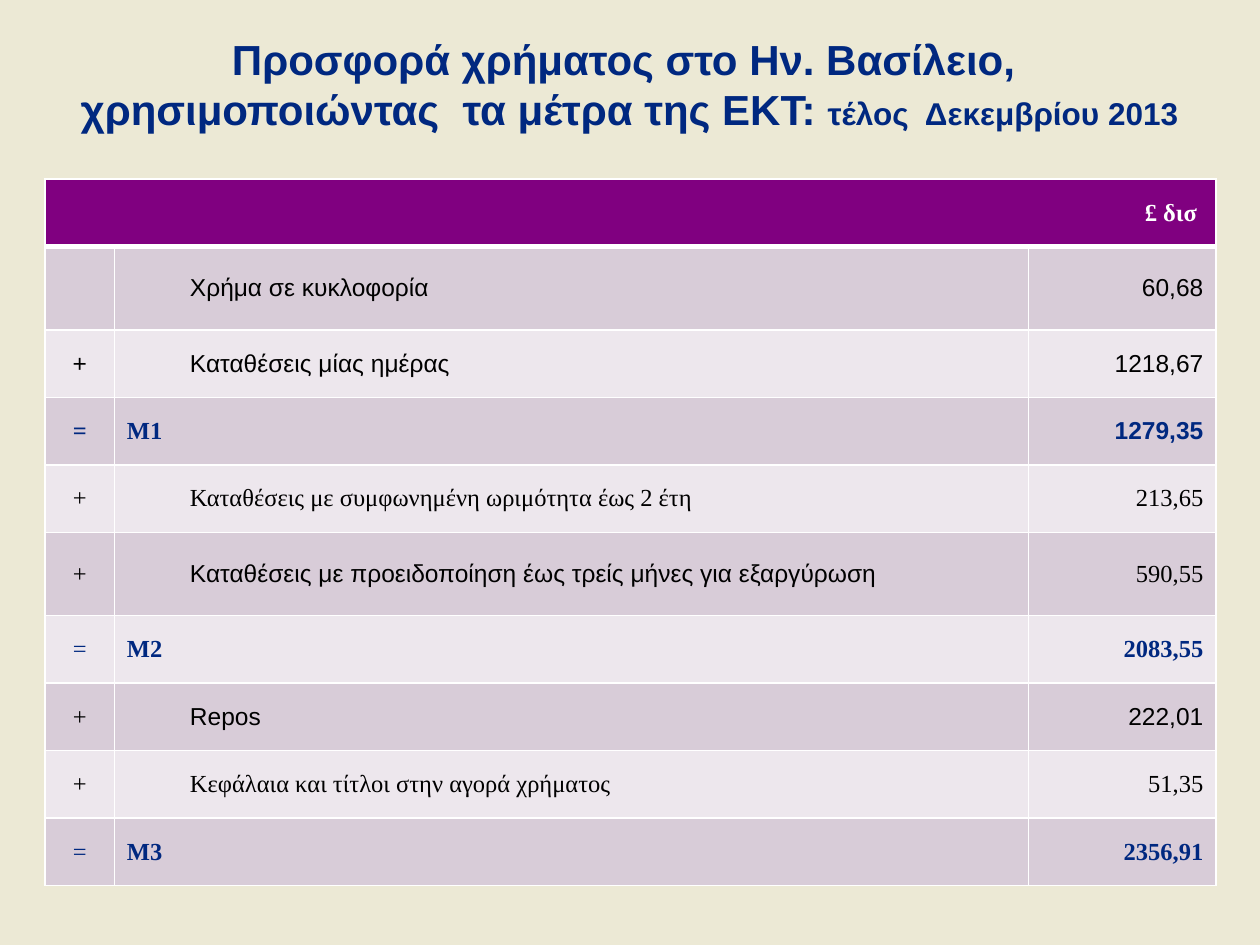
from pptx import Presentation
from pptx.dml.color import RGBColor
from pptx.enum.text import MSO_ANCHOR as Anchor, PP_ALIGN as Align
from pptx.oxml import parse_xml
from pptx.oxml.ns import nsdecls, qn
from pptx.util import Cm, Pt

NAVY, BLACK, WHITE = "002880", "000000", "FFFFFF"
PURPLE, DARK, LIGHT = "800080", "D8CCD8", "EDE7ED"
FONTS = {"A": "Arial", "T": "Times New Roman"}
WIDTHS = [1.4, 18.42, 3.78]
ROW, TALL = 1.36, 1.68
PAD, WIDE = 0.25, 0.38

# Sign, label, amount, and the font of each
ROWS = [
    ("", "Χρήμα σε κυκλοφορία", "60,68", "AAA"),
    ("+", "Καταθέσεις μίας ημέρας", "1218,67", "AAA"),
    ("=", "Μ1", "1279,35", "TTA"),
    ("+", "Καταθέσεις με συμφωνημένη ωριμότητα έως 2 έτη", "213,65", "TTT"),
    ("+", "Καταθέσεις με προειδοποίηση έως τρείς μήνες για εξαργύρωση",
     "590,55", "TAT"),
    ("=", "Μ2", "2083,55", "TTT"),
    ("+", "Repos", "222,01", "TAA"),
    ("+", "Κεφάλαια και τίτλοι στην αγορά χρήματος", "51,35", "TTT"),
    ("=", "M3", "2356,91", "TTT"),
]
TALL_ROWS = (1, 5)


def color(text):
    """Turn a hex string into a colour."""
    return RGBColor.from_string(text)


def style(font, name, size, tint, bold=False):
    """Set the look of a font."""
    font.name, font.size, font.bold = name, Pt(size), bold
    font.color.rgb = color(tint)


def shade(run):
    """Give a run of text a dark shadow."""
    run._r.get_or_add_rPr().append(parse_xml(
        f'<a:effectLst {nsdecls("a")}><a:outerShdw dist="25400" dir="2700000">'
        f'<a:srgbClr val="{BLACK}"/></a:outerShdw></a:effectLst>'))


def add_title(slide):
    """Fill the title in two sizes."""
    title = slide.shapes.title
    title.left, title.top = Cm(0.08), Cm(0.53)
    title.width, title.height = Cm(25.22), Cm(2.31)
    para = title.text_frame.paragraphs[0]
    para.alignment = Align.CENTER
    style(para.font, FONTS["A"], 24, NAVY, True)
    main = ("Προσφορά χρήματος στο Ην. Βασίλειο, ",
            "χρησιμοποιώντας  τα μέτρα της ΕΚΤ: ")
    for text, size in ((main[0], 24), (main[1], 24),
                       ("τέλος  Δεκεμβρίου 2013", 18)):
        if text == main[1]:
            para.add_line_break()
        run = para.add_run()
        run.text, run.font.size = text, Pt(size)
        shade(run)


def edge(cell, base=1):
    """Draw white borders round a cell."""
    props = cell._tc.get_or_add_tcPr()
    for spot, side in enumerate("LRTB"):
        wide = Pt(base if side == "B" else 1)
        props.insert(spot, parse_xml(
            f'<a:ln{side} {nsdecls("a")} w="{wide}"><a:solidFill>'
            f'<a:srgbClr val="{WHITE}"/></a:solidFill></a:ln{side}>'))


def paint(cell, fill, base=1):
    """Set the fill, borders and anchor of a cell."""
    cell.fill.solid()
    cell.fill.fore_color.rgb = color(fill)
    cell.vertical_anchor = Anchor.MIDDLE
    edge(cell, base)


def write(cell, text, align, font, tint, bold=False, pad=PAD):
    """Put one line of text in a cell."""
    cell.margin_left = cell.margin_right = Cm(pad)
    if pad == WIDE:
        cell.margin_top = cell.margin_bottom = Cm(pad)
    para = cell.text_frame.paragraphs[0]
    para.text, para.alignment = text, align
    style(para.font, FONTS[font], 14, tint, bold)
    return para


def add_head(table):
    """Merge and fill the header row."""
    for cell in table.rows[0].cells:
        paint(cell, PURPLE, 3)
    head = table.cell(0, 0)
    head.merge(table.cell(0, 2))
    write(head, "£ δισ", Align.RIGHT, "T", WHITE, True, WIDE)


def add_row(table, num, sign, label, amount, fonts):
    """Fill one row of the table."""
    total = sign == "="
    tint = NAVY if total else BLACK
    cells = table.rows[num].cells
    for cell in cells:
        paint(cell, DARK if num % 2 else LIGHT)
    if sign:
        write(cells[0], sign, Align.CENTER, fonts[0], tint,
              label == "Μ1", WIDE)
    para = write(cells[1], label, Align.LEFT, fonts[1], tint, total)
    if not total:
        para.level = 1
        para._p.get_or_add_pPr().set("marL", str(Cm(1.27)))
    write(cells[2], amount, Align.RIGHT, fonts[2], tint, total)


def add_grid(slide):
    """Add the table of money measures."""
    size = len(ROWS) + 1
    table = slide.shapes.add_table(size, 3, Cm(0.91), Cm(3.61),
                                   Cm(sum(WIDTHS)), Cm(ROW * size)).table
    for col, wide in zip(table.columns, WIDTHS):
        col.width = Cm(wide)
    for num, row in enumerate(table.rows):
        row.height = Cm(TALL if num in TALL_ROWS else ROW)
    add_head(table)
    for num, row in enumerate(ROWS, 1):
        add_row(table, num, *row)


def main():
    """Build the slide and save it."""
    deck = Presentation()
    deck.slide_width, deck.slide_height = Cm(25.4), Cm(19.05)
    slide = deck.slides.add_slide(deck.slide_layouts[5])
    back = slide.background.fill
    back.solid()
    back.fore_color.rgb = color("ECE9D5")
    add_title(slide)
    add_grid(slide)
    deck.save("out.pptx")


if __name__ == "__main__":
    main()
